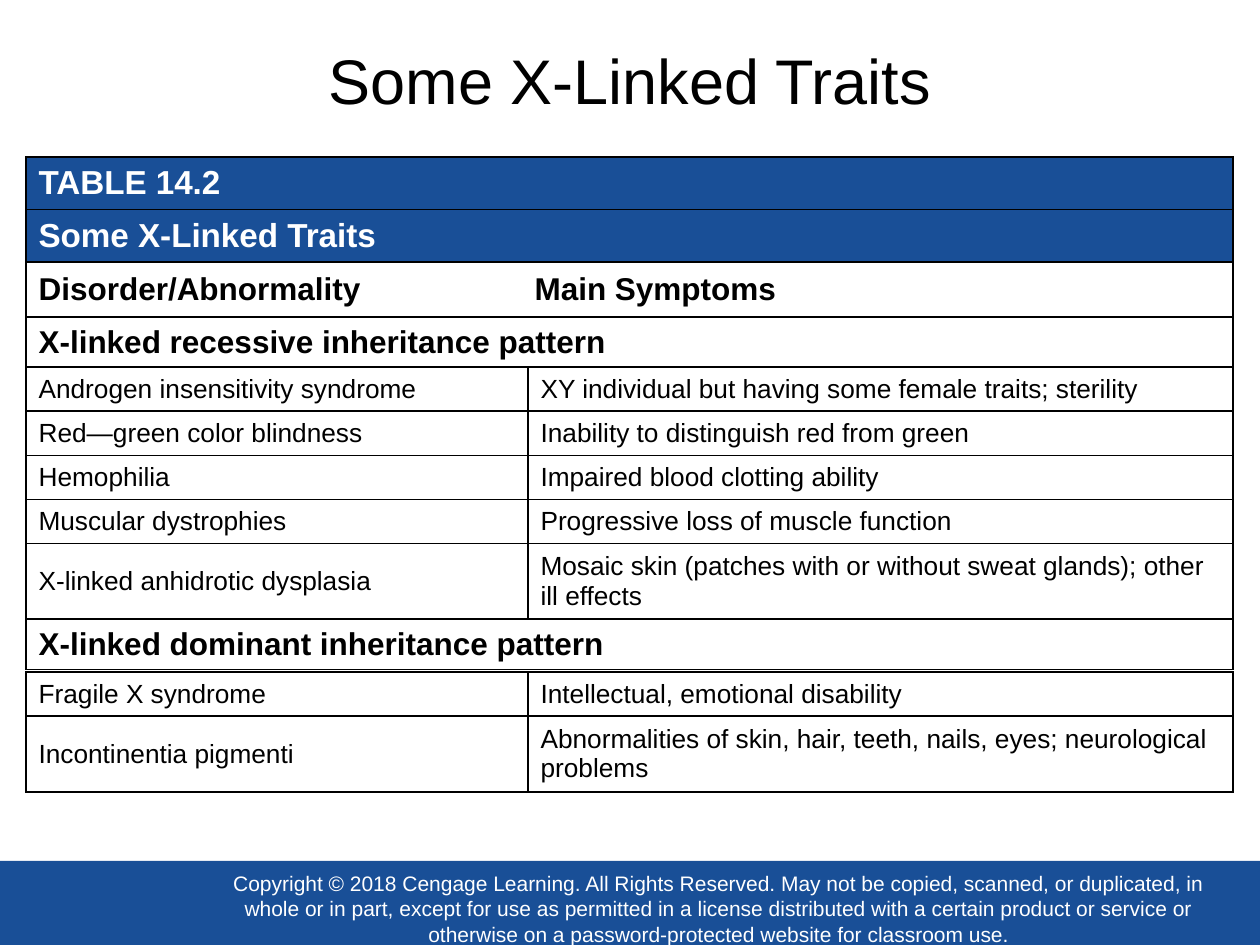
from lxml import etree
from pptx import Presentation
from pptx.dml.color import RGBColor
from pptx.enum.shapes import MSO_SHAPE
from pptx.enum.text import MSO_ANCHOR, PP_ALIGN
from pptx.oxml.ns import qn
from pptx.util import Emu, Pt

EMU_PER_PX = 914400 // 126
RECTANGLE = MSO_SHAPE.RECTANGLE
MIDDLE = MSO_ANCHOR.MIDDLE
CENTER = PP_ALIGN.CENTER

COLORS = {"blue": "194F97", "white": "FFFFFF", "black": "000000"}
FONT = "Arial"

TABLE_LEFT = 26
FULL_WIDTH = [1207]
TRAIT_WIDTHS = [502, 705]
SYMPTOMS_TAB = 496
LINE_ROW, TWO_LINE_ROW = 43, 71

RECESSIVE_TRAITS = [
    ("Androgen insensitivity syndrome", "XY individual but having some female traits; sterility"),
    ("Red—green color blindness", "Inability to distinguish red from green"),
    ("Hemophilia", "Impaired blood clotting ability"),
    ("Muscular dystrophies", "Progressive loss of muscle function"),
    ("X-linked anhidrotic dysplasia",
     "Mosaic skin (patches with or without sweat glands); other ill effects"),
]
DOMINANT_TRAITS = [
    ("Fragile X syndrome", "Intellectual, emotional disability"),
    ("Incontinentia pigmenti",
     "Abnormalities of skin, hair, teeth, nails, eyes; neurological problems"),
]
COPYRIGHT = (
    "Copyright © 2018 Cengage Learning. All Rights Reserved. May not be copied, scanned, "
    "or duplicated, in whole or in part, except for use as permitted in a license "
    "distributed with a certain product or service or otherwise on a password-protected "
    "website for classroom use."
)


def px(length):
    return Emu(length * EMU_PER_PX)


def rgb(name):
    return RGBColor.from_string(COLORS[name])


def set_font(paragraph, size, color, bold=False):
    font = paragraph.font
    font.name, font.size, font.bold = FONT, Pt(size), bold
    font.color.rgb = rgb(color)


def add_bar(slide, left, top, width, height):
    bar = slide.shapes.add_shape(RECTANGLE, px(left), px(top), px(width), px(height))
    bar.shadow.inherit = False
    bar.fill.solid()
    bar.fill.fore_color.rgb = rgb("blue")
    bar.line.fill.background()
    return bar


def write_centered(frame, text, size, color):
    frame.word_wrap = True
    frame.vertical_anchor = MIDDLE
    paragraph = frame.paragraphs[0]
    paragraph.text = text
    paragraph.alignment = CENTER
    set_font(paragraph, size, color)


def add_footer(slide):
    add_bar(slide, 0, 861, 1260, 84)
    notice = add_bar(slide, 210, 872, 1018, 73).text_frame
    notice.margin_left = notice.margin_right = notice.margin_top = notice.margin_bottom = 0
    write_centered(notice, COPYRIGHT, 12, "white")


def add_title(slide, text):
    title = slide.shapes.add_textbox(px(77), px(0), px(1106), px(158))
    write_centered(title.text_frame, text, 36, "black")


def add_borders(cell):
    properties = cell._tc.get_or_add_tcPr()
    for side in ("a:lnL", "a:lnR", "a:lnT", "a:lnB"):
        line = etree.SubElement(properties, qn(side), w=str(Pt(1)))
        fill = etree.SubElement(line, qn("a:solidFill"))
        etree.SubElement(fill, qn("a:srgbClr"), val=COLORS["black"])


def add_tab_stop(paragraph, position):
    stops = etree.SubElement(paragraph._p.get_or_add_pPr(), qn("a:tabLst"))
    etree.SubElement(stops, qn("a:tab"), pos=str(px(position)), algn="l")


def add_grid(slide, top, widths, heights, rows, size, color="black", fill=None, bold=False):
    """Add a bordered table; a tab in a cell's text jumps to the symptoms column."""
    table = slide.shapes.add_table(
        len(rows), len(widths), px(TABLE_LEFT), px(top), px(sum(widths)), px(sum(heights))
    ).table
    table.first_row = table.horz_banding = False
    for column, width in zip(table.columns, widths):
        column.width = px(width)
    for row, height, texts in zip(table.rows, heights, rows):
        row.height = px(height)
        for cell, text in zip(row.cells, texts):
            cell.vertical_anchor = MIDDLE
            add_borders(cell)
            if fill:
                cell.fill.solid()
                cell.fill.fore_color.rgb = rgb(fill)
            else:
                cell.fill.background()
            paragraph = cell.text_frame.paragraphs[0]
            paragraph.text = text
            if "\t" in text:
                add_tab_stop(paragraph, SYMPTOMS_TAB)
            set_font(paragraph, size, color, bold)


def add_headings(slide, top, heights, texts, size=18, color="black", fill="white"):
    rows = [(text,) for text in texts]
    add_grid(slide, top, FULL_WIDTH, heights, rows, size, color, fill, bold=True)


def add_traits(slide, top, traits):
    """List the traits, the last of which takes two lines."""
    heights = [LINE_ROW] * (len(traits) - 1) + [TWO_LINE_ROW]
    add_grid(slide, top, TRAIT_WIDTHS, heights, traits, 15)


def main():
    presentation = Presentation()
    presentation.slide_width, presentation.slide_height = px(1260), px(945)
    slide = presentation.slides.add_slide(presentation.slide_layouts[6])

    add_footer(slide)
    add_title(slide, "Some X-Linked Traits")
    add_headings(slide, 157, [50, 50], ["TABLE 14.2", "Some X-Linked Traits"],
                 19, "white", "blue")
    add_headings(slide, 262, [55, 48], ["Disorder/Abnormality\tMain Symptoms",
                                        "X-linked recessive inheritance pattern"])
    add_traits(slide, 367, RECESSIVE_TRAITS)
    add_headings(slide, 619, [48], ["X-linked dominant inheritance pattern"])
    add_traits(slide, 672, DOMINANT_TRAITS)

    presentation.save("out.pptx")


if __name__ == "__main__":
    main()
